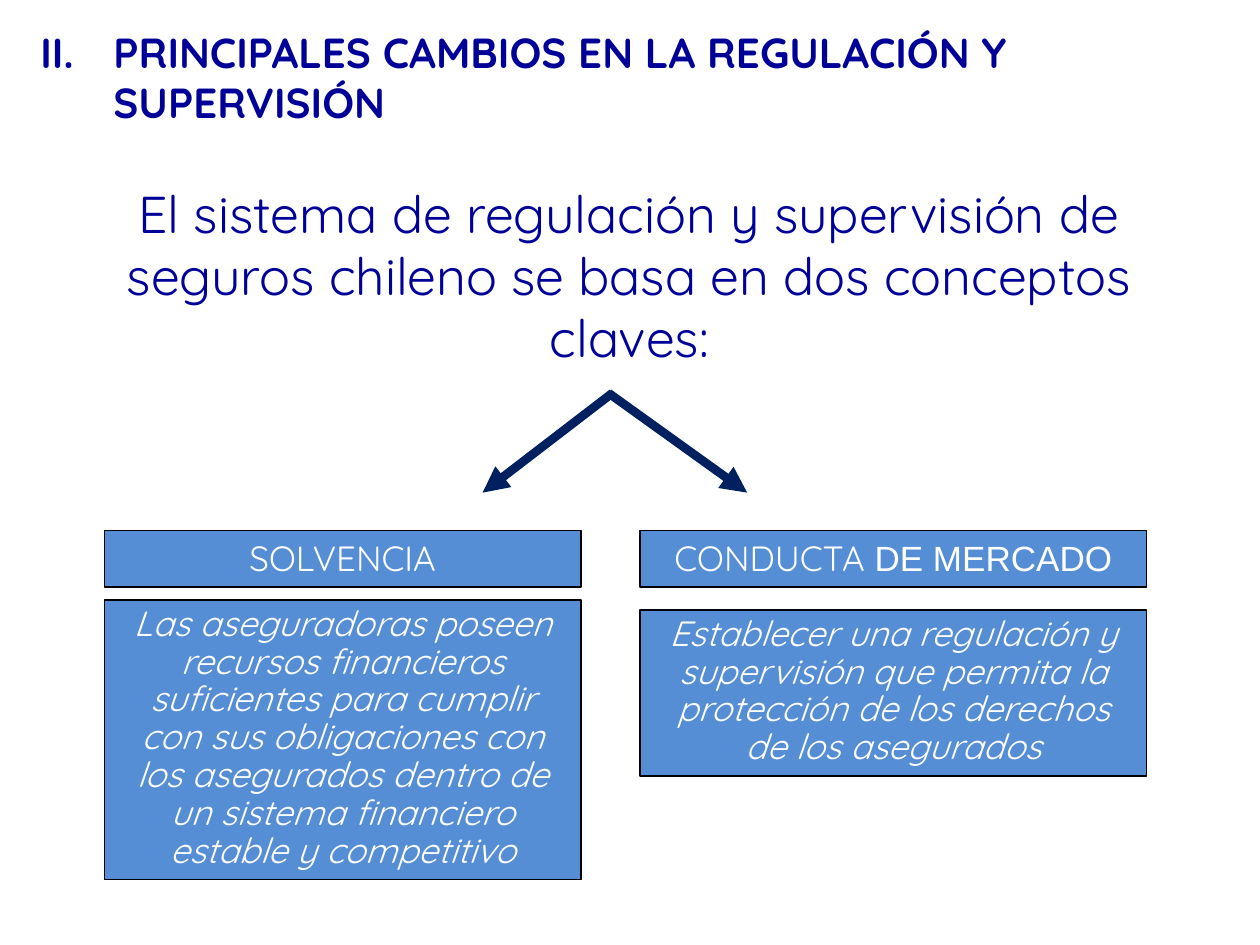
from lxml import etree
from pptx import Presentation
from pptx.dml.color import RGBColor
from pptx.enum.shapes import MSO_CONNECTOR, MSO_SHAPE
from pptx.enum.text import MSO_ANCHOR, MSO_AUTO_SIZE, PP_ALIGN
from pptx.oxml.ns import qn
from pptx.util import Inches, Pt

RECTANGLE = MSO_SHAPE.RECTANGLE
STRAIGHT = MSO_CONNECTOR.STRAIGHT
TOP = MSO_ANCHOR.TOP
LEFT, CENTER = PP_ALIGN.LEFT, PP_ALIGN.CENTER
NO_FIT, GROW = MSO_AUTO_SIZE.NONE, MSO_AUTO_SIZE.SHAPE_TO_FIT_TEXT

FONT = "Quicksand"
HEADING_BLUE = "000099"
BOX_BLUE = "558ED5"
ARROW_BLUE = "002060"
WHITE = "FFFFFF"
BLACK = "000000"


def color(value):
    """Return the colour for a hex string."""
    return RGBColor.from_string(value)


def place(shape, left, top, width, height):
    """Move and size a shape, in inches."""
    shape.left, shape.top = Inches(left), Inches(top)
    shape.width, shape.height = Inches(width), Inches(height)


def add_span(para, text, size, ink, font=FONT, bold=False, italic=False):
    """Add one formatted run to a paragraph."""
    span = para.add_run()
    span.text = text
    span.font.name = font
    span.font.size = Pt(size)
    span.font.bold = bold
    span.font.italic = italic
    span.font.color.rgb = color(ink)


def start_text(shape, align, fit):
    """Set up the text frame of a shape and return its first paragraph."""
    frame = shape.text_frame
    frame.word_wrap = True
    frame.auto_size = fit
    frame.vertical_anchor = TOP
    para = frame.paragraphs[0]
    para.alignment = align
    return para


def set_indent(para, margin, first_line):
    """Set the left margin and first-line indent without a bullet."""
    properties = para._p.get_or_add_pPr()
    properties.set("marL", str(Inches(margin)))
    properties.set("indent", str(Inches(first_line)))
    etree.SubElement(properties, qn("a:buNone"))


def fill_title(slide):
    """Write the numbered section title."""
    title = slide.shapes.title
    place(title, 0.22, 0.16, 9.5, 0.91)
    para = start_text(title, LEFT, NO_FIT)
    set_indent(para, 0.58, -0.58)
    text = "II. \tPRINCIPALES CAMBIOS EN LA REGULACIÓN Y SUPERVISIÓN"
    add_span(para, text, 24, HEADING_BLUE, bold=True)


def fill_body(slide):
    """Write the introductory sentence."""
    body = slide.placeholders[1]
    place(body, 0.43, 1.39, 8.74, 1.42)
    para = start_text(body, CENTER, NO_FIT)
    set_indent(para, 0.39, 0)
    text = ("El sistema de regulación y supervisión de seguros chileno "
            "se basa en dos conceptos claves:")
    add_span(para, text, 29.6, HEADING_BLUE)


def add_box(slide, left, top, width, height):
    """Add a blue outlined box and return its paragraph."""
    box = slide.shapes.add_shape(RECTANGLE, 0, 0, 0, 0)
    place(box, left, top, width, height)
    box.shadow.inherit = False
    box.fill.solid()
    box.fill.fore_color.rgb = color(BOX_BLUE)
    box.line.color.rgb = color(BLACK)
    box.line.width = Pt(1)
    return start_text(box, CENTER, GROW)


def add_concept(slide, left, width, heading, top, height, text):
    """Add a heading box with its description box below."""
    para = add_box(slide, left, 4.21, width, 0.45)
    for words, font in heading:
        add_span(para, words, 20, WHITE, font)
    para = add_box(slide, left, top, width, height)
    para.line_spacing = 0.9
    add_span(para, text, 20, WHITE, italic=True)


def add_arrow(slide, start, end):
    """Add a thick arrow between two points."""
    points = [Inches(value) for value in (*start, *end)]
    arrow = slide.shapes.add_connector(STRAIGHT, *points)
    arrow.line.color.rgb = color(ARROW_BLUE)
    arrow.line.width = Pt(5)
    outline = arrow.line._get_or_add_ln()
    etree.SubElement(outline, qn("a:tailEnd"), type="triangle")
    etree.SubElement(arrow._element.spPr, qn("a:effectLst"))


def main():
    """Build and save the slide."""
    deck = Presentation()
    deck.slide_width, deck.slide_height = Inches(10), Inches(7.5)
    slide = deck.slides.add_slide(deck.slide_layouts[1])
    fill_title(slide)
    fill_body(slide)
    add_concept(
        slide, 0.83, 3.78, [("SOLVENCIA", FONT)], 4.76, 2.22,
        "Las aseguradoras poseen recursos financieros suficientes para "
        "cumplir con sus obligaciones con los asegurados dentro de un "
        "sistema financiero estable y competitivo")
    add_concept(
        slide, 5.08, 4.02, [("CONDUCTA", FONT), (" DE MERCADO", "Arial")],
        4.84, 1.32,
        "Establecer una regulación y supervisión que permita la "
        "protección de los derechos de los asegurados")
    add_arrow(slide, (4.86, 3.12), (3.83, 3.91))
    add_arrow(slide, (4.83, 3.12), (5.93, 3.91))
    deck.save("out.pptx")


if __name__ == "__main__":
    main()
